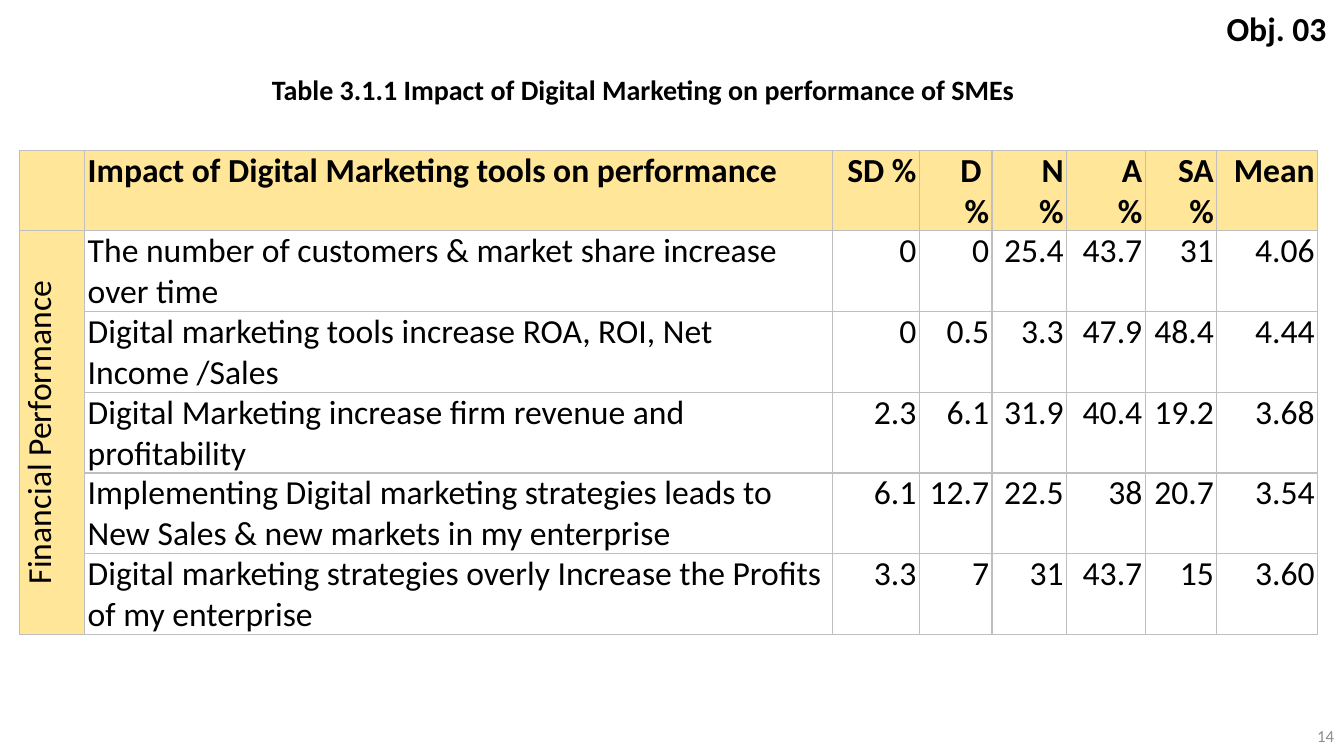
import pptx
import pptx.util
import pptx.dml.color
import pptx.enum.text
import pptx.oxml
import pptx.oxml.ns

WIDE, HIGH = 13.33, 7.5
FONT = "Calibri"
HUES = {"ink": "000000", "gold": "FFE699", "rule": "BFBFBF", "gray": "8C8C8C"}
ALIGN = pptx.enum.text.PP_ALIGN
ANCHOR = pptx.enum.text.MSO_ANCHOR
COLS = [0.65, 7.42, 0.86, 0.72, 0.74, 0.78, 0.71, 1]
HEAD = ["", "Impact of Digital Marketing tools on performance",
        "SD %", "D \n%", "N\n%", "A\n%", "SA\n%", "Mean"]
ROWS = [
    ["The number of customers & market share increase over time",
     "0", "0", "25.4", "43.7", "31", "4.06"],
    ["Digital marketing tools increase ROA, ROI, Net Income /Sales",
     "0", "0.5", "3.3", "47.9", "48.4", "4.44"],
    ["Digital Marketing increase firm revenue and profitability",
     "2.3", "6.1", "31.9", "40.4", "19.2", "3.68"],
    ["Implementing Digital marketing strategies leads to New Sales & new markets in my enterprise",
     "6.1", "12.7", "22.5", "38", "20.7", "3.54"],
    ["Digital marketing strategies overly Increase the Profits of my enterprise",
     "3.3", "7", "31", "43.7", "15", "3.60"],
]


def inch(size):
    return pptx.util.Inches(size)


def tint(name):
    return pptx.dml.color.RGBColor.from_string(HUES[name])


def write(frame, text, size=24, bold=False, hue="ink", align=ALIGN.LEFT,
          anchor=None, lead=None, after=None):
    frame.word_wrap = True
    if anchor is not None:
        frame.vertical_anchor = anchor
    frame.text = text
    for para in frame.paragraphs:
        para.alignment = align
        if lead:
            para.line_spacing = lead
        if after:
            para.space_after = pptx.util.Pt(after)
        for run in para.runs:
            run.font.name = FONT
            run.font.size = pptx.util.Pt(size)
            run.font.bold = bold
            run.font.color.rgb = tint(hue)


def label(slide, box, text, **form):
    shape = slide.shapes.add_textbox(*map(inch, box))
    write(shape.text_frame, text, **form)


def title(slide, box, text):
    shape = slide.shapes.title
    shape.left, shape.top, shape.width, shape.height = map(inch, box)
    write(shape.text_frame, text, size=20, bold=True, align=ALIGN.CENTER,
          anchor=ANCHOR.TOP)
    shape.text_frame.auto_size = pptx.enum.text.MSO_AUTO_SIZE.NONE


def edge(cell):
    props = cell._tc.get_or_add_tcPr()
    for spot, side in enumerate(("lnL", "lnR", "lnT", "lnB")):
        line = pptx.oxml.parse_xml(
            f'<a:{side} {pptx.oxml.ns.nsdecls("a")} w="12700"><a:solidFill>'
            f'<a:srgbClr val="{HUES["rule"]}"/></a:solidFill></a:{side}>')
        props.insert(spot, line)


def dress(cell, text, gold=False, **form):
    cell.margin_left = cell.margin_right = inch(0.03)
    cell.margin_top = cell.margin_bottom = 0
    if gold:
        cell.fill.solid()
        cell.fill.fore_color.rgb = tint("gold")
    else:
        cell.fill.background()
    edge(cell)
    write(cell.text_frame, text, **form)


def survey(slide, box):
    count = len(ROWS) + 1
    frame = slide.shapes.add_table(count, len(COLS), *map(inch, box))
    table = frame.table
    table.horz_banding = False
    for col, share in zip(table.columns, COLS):
        col.width = inch(box[2] * share / sum(COLS))
    for row in table.rows:
        row.height = inch(box[3] / count)
    grid = [HEAD] + [["Financial Performance" if i == 0 else ""] + row
                     for i, row in enumerate(ROWS)]
    for r, row in enumerate(grid):
        for c, text in enumerate(row):
            align = ALIGN.RIGHT if c > 1 else ALIGN.LEFT
            if c == 0:
                align = ALIGN.CENTER
            elif r == 0 and c == 1:
                align = ALIGN.JUSTIFY
            dress(table.cell(r, c), text, gold=r == 0 or c == 0,
                  bold=r == 0, align=align)
    side = table.cell(1, 0)
    side.merge(table.cell(count - 1, 0))
    side._tc.get_or_add_tcPr().set("vert", "vert270")


def build():
    deck = pptx.Presentation()
    deck.slide_width, deck.slide_height = inch(WIDE), inch(HIGH)
    slide = deck.slides.add_slide(deck.slide_layouts[5])
    label(slide, (0, 0, WIDE, 0.53), "Obj. 03 ", bold=True,
          align=ALIGN.RIGHT, lead=1.07, after=8)
    title(slide, (0, 0.67, 12.76, 0.44),
          "Table 3.1.1 Impact of Digital Marketing on performance of SMEs")
    survey(slide, (0.19, 1.49, 12.88, 4.8))
    label(slide, (WIDE - 3, HIGH - 0.4, 3, 0.4), "14", size=12, hue="gray",
          align=ALIGN.RIGHT, anchor=ANCHOR.MIDDLE)
    deck.save("out.pptx")


if __name__ == "__main__":
    build()
